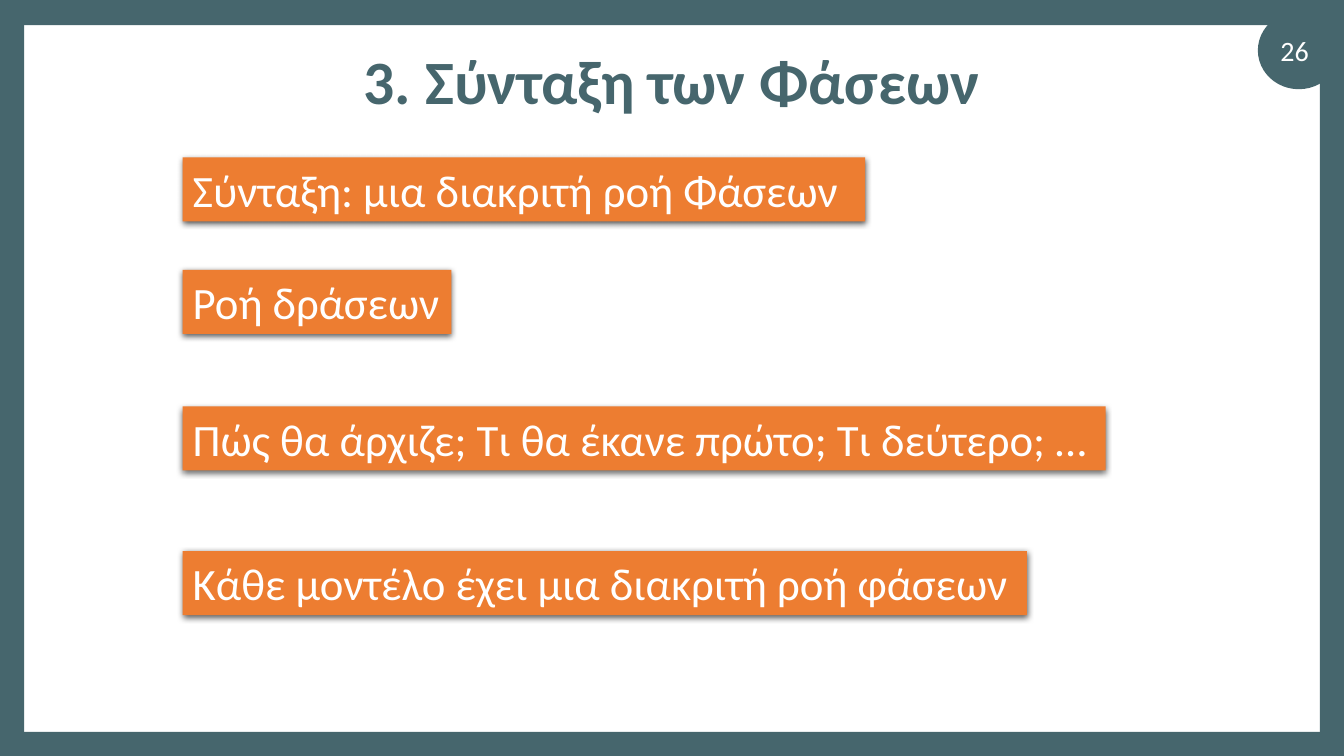
from dataclasses import dataclass

import pptx
import pptx.dml.color
import pptx.enum.shapes
import pptx.enum.text
import pptx.oxml
import pptx.oxml.ns
import pptx.util
from pptx.enum.shapes import MSO_SHAPE
from pptx.enum.text import MSO_ANCHOR, MSO_AUTO_SIZE, PP_ALIGN

PX = 9525  # EMU per px, 96 px to the inch
WIDTH, HEIGHT = 1280, 720
BORDER = 23
FONT = "Calibri"

TEAL = pptx.dml.color.RGBColor(0x46, 0x66, 0x6D)
ORANGE = pptx.dml.color.RGBColor(0xED, 0x7D, 0x31)
WHITE = pptx.dml.color.RGBColor(0xFF, 0xFF, 0xFF)

SOFT_SHADOW = (
    f'<a:effectLst {pptx.oxml.ns.nsdecls("a")}>'
    '<a:outerShdw blurRad="57150" dist="19050" dir="5400000" algn="ctr" rotWithShape="0">'
    '<a:srgbClr val="000000"><a:alpha val="63000"/></a:srgbClr>'
    "</a:outerShdw></a:effectLst>"
)


@dataclass(frozen=True)
class Box:
    left: int
    top: int
    width: int
    height: int

    def emu(self) -> list[int]:
        return [n * PX for n in (self.left, self.top, self.width, self.height)]


@dataclass(frozen=True)
class Statement:
    text: str
    top: int
    width: int


FRAME = [
    Box(0, 0, WIDTH, BORDER + 1),
    Box(0, HEIGHT - BORDER, WIDTH, BORDER),
    Box(0, 0, BORDER, HEIGHT),
    Box(WIDTH - BORDER, 0, BORDER, HEIGHT),
]
NUMBER_DISC = Box(1198, 11, 78, 74)
NUMBER_LABEL = Box(1194, 29, 78, 38)
TITLE = Box(88, 38, 1104, 85)

STATEMENT_LEFT, STATEMENT_HEIGHT = 174, 61
STATEMENTS = [
    Statement("Σύνταξη: μια διακριτή ροή Φάσεων ", 150, 650),
    Statement("Ροή δράσεων", 257, 256),
    Statement("Πώς θα άρχιζε; Τι θα έκανε πρώτο; Τι δεύτερο; …", 387, 879),
    Statement("Κάθε μοντέλο έχει μια διακριτή ροή φάσεων", 525, 804),
]


def add_filled(slide, kind: MSO_SHAPE, box: Box, color: pptx.dml.color.RGBColor):
    shape = slide.shapes.add_shape(kind, *box.emu())
    shape.shadow.inherit = False
    shape.fill.solid()
    shape.fill.fore_color.rgb = color
    shape.line.fill.background()
    return shape


def write(frame, text: str, size: int, color: pptx.dml.color.RGBColor,
          align: PP_ALIGN, anchor: MSO_ANCHOR, bold: bool = False):
    frame.vertical_anchor = anchor
    paragraph = frame.paragraphs[0]
    paragraph.alignment = align
    run = paragraph.add_run()
    run.text = text
    run.font.name = FONT
    run.font.size = pptx.util.Pt(size)
    run.font.bold = bold
    run.font.color.rgb = color
    return paragraph


def add_statement(slide, statement: Statement) -> None:
    box = Box(STATEMENT_LEFT, statement.top, statement.width, STATEMENT_HEIGHT)
    banner = add_filled(slide, MSO_SHAPE.RECTANGLE, box, ORANGE)
    properties = banner._element.spPr
    properties.remove(properties.find(pptx.oxml.ns.qn("a:effectLst")))
    properties.append(pptx.oxml.parse_xml(SOFT_SHADOW))
    banner.text_frame.word_wrap = False
    banner.text_frame.auto_size = MSO_AUTO_SIZE.SHAPE_TO_FIT_TEXT
    write(banner.text_frame, statement.text, 32, WHITE, PP_ALIGN.LEFT, MSO_ANCHOR.TOP)


def main() -> None:
    deck = pptx.Presentation()
    deck.slide_width, deck.slide_height = WIDTH * PX, HEIGHT * PX
    slide = deck.slides.add_slide(deck.slide_layouts[5])

    # Frame and page number
    add_filled(slide, MSO_SHAPE.OVAL, NUMBER_DISC, TEAL)
    for bar in FRAME:
        add_filled(slide, MSO_SHAPE.RECTANGLE, bar, TEAL)
    page_number = slide.shapes.add_textbox(*NUMBER_LABEL.emu())
    page_number.text_frame.word_wrap = True
    write(page_number.text_frame, "26", 20, WHITE, PP_ALIGN.CENTER, MSO_ANCHOR.MIDDLE)

    # Title
    title = slide.shapes.title
    title.left, title.top, title.width, title.height = TITLE.emu()
    heading = write(title.text_frame, "3. Σύνταξη των Φάσεων", 44, TEAL,
                    PP_ALIGN.CENTER, MSO_ANCHOR.MIDDLE, bold=True)
    heading.line_spacing = 0.9

    # Statements
    for statement in STATEMENTS:
        add_statement(slide, statement)

    deck.save("out.pptx")


if __name__ == "__main__":
    main()
